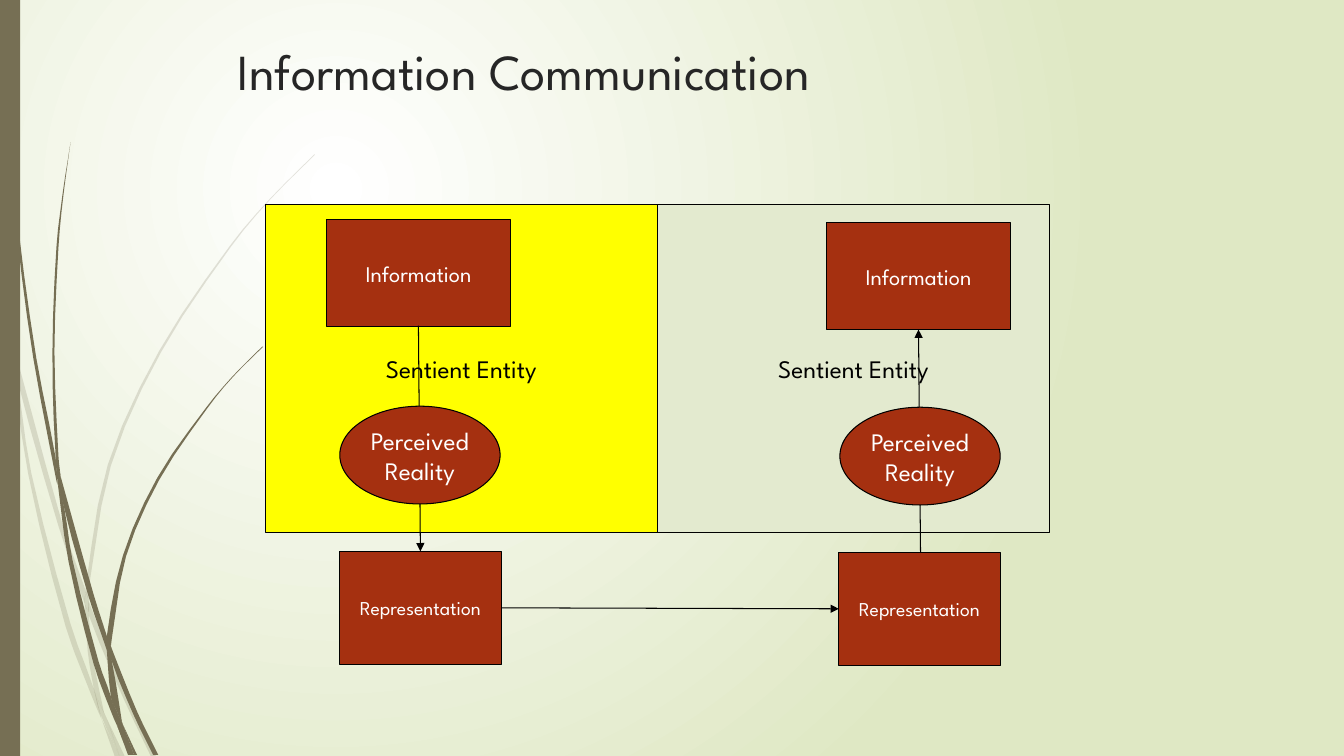
import pptx
import pptx.util
import pptx.dml.color
import pptx.enum.shapes
import pptx.enum.text
import pptx.oxml
import pptx.oxml.ns

Inches, Pt, Color = pptx.util.Inches, pptx.util.Pt, pptx.dml.color.RGBColor
Shape = pptx.enum.shapes.MSO_SHAPE
Anchor = pptx.enum.text.MSO_ANCHOR
Align = pptx.enum.text.PP_ALIGN

# Colours
WHITE, BLACK = Color(0xFF, 0xFF, 0xFF), Color(0, 0, 0)
GREEN, PALE = Color(0xDF, 0xE8, 0xC4), Color(0xE3, 0xEA, 0xCF)
YELLOW, RUST = Color(0xFF, 0xFF, 0), Color(0xA5, 0x30, 0x10)
OLIVE, CHARCOAL = Color(0x76, 0x6F, 0x54), Color(0x26, 0x26, 0x26)

# Content
FONT = "League Spartan"
TITLE = "Information Communication"
ENTITY = "Sentient Entity"
# text, preset, width, height, font size, (left, top) on each side
PARTS = [
    ("Representation", Shape.RECTANGLE, 1.6, 1.12, 14, [(3.37, 5.47), (8.32, 5.48)]),
    ("Information", Shape.RECTANGLE, 1.82, 1.06, 16, [(3.24, 2.18), (8.2, 2.21)]),
]
REALITY = ("Perceived\nReality", Shape.OVAL, 1.59, 0.97, 18, [(3.37, 4.03), (8.33, 4.04)])
ARROWS = [
    ((4.97, 6.03), (8.32, 6.04)),
    ((4.15, 3.23), (4.17, 5.47)),
    ((9.13, 5.48), (9.11, 3.27)),
]

# Slide and entity panels, in inches
WIDTH, HEIGHT = 13.33, 7.5
PANEL_LEFT, PANEL_TOP, PANEL_WIDTH, PANEL_HEIGHT = 2.63, 2.03, 3.89, 3.25
PANELS = [(1, PALE), (0, YELLOW)]  # column, fill; back to front

# Grass blades: the two edges of each piece, from top to bottom
FADED_BLADES = [
    ([(0, 2.82), (0.09, 3.22), (0.11, 3.5)], [(0, 2.99), (0.1, 3.44), (0.11, 3.5)]),
    ([(0.14, 3.45), (0.62, 5.2), (0.85, 5.86)],
     [(0.14, 3.45), (0.17, 3.76), (0.58, 5.22), (0.84, 5.99)]),
    ([(0.88, 5.96), (0.92, 6.07), (1.27, 6.92), (1.55, 7.51)],
     [(0.88, 5.96), (0.88, 6.1), (1.23, 6.94), (1.5, 7.51)]),
    ([(1.05, 7.11), (1.24, 7.51)], [(1.05, 7.11), (1.19, 7.51)]),
    ([(0.11, 3.5), (0.17, 3.76), (0.31, 4.69), (0.7, 6.19), (0.93, 6.83), (1.01, 7.14)],
     [(0.11, 3.5), (0.28, 4.7), (0.65, 6.21), (0.92, 6.93), (1.01, 7.14)]),
    ([(0.84, 5.99), (0.88, 6.1), (0.91, 6.46), (1.03, 7.06), (1.05, 7.11)],
     [(0.84, 5.99), (0.87, 6.46), (0.93, 6.83), (0.96, 6.92), (1.05, 7.11)]),
    ([(3.12, 1.53), (2.68, 1.97), (2.28, 2.44), (1.58, 3.48), (1.07, 4.61), (0.85, 5.84),
      (0.88, 5.96)],
     [(3.12, 1.54), (2.68, 1.98), (2.29, 2.45), (1.6, 3.49), (1.1, 4.62), (0.88, 5.84)]),
    ([(1.01, 7.14), (1.14, 7.51)], [(1.01, 7.14), (1.19, 7.51)]),
    ([(0.85, 5.86), (0.84, 5.99), (0.88, 6.08)], [(0.85, 5.86), (0.88, 5.96), (0.88, 6.1)]),
    ([(0.93, 6.83), (0.99, 7.07), (1.19, 7.51)],
     [(0.93, 6.83), (0.96, 6.92), (1.05, 7.11), (1.19, 7.51)]),
]
DARK_BLADES = [
    ([(0.03, 0), (0.04, 0.48), (0.07, 1.1), (0.17, 2.33), (0.33, 3.55), (0.56, 4.77)],
     [(0.04, 0), (0.05, 0.48), (0.08, 1.09), (0.19, 2.32), (0.36, 3.55), (0.55, 4.53),
      (0.57, 4.81)]),
    ([(0.6, 4.72), (0.93, 5.9), (1.06, 6.31)],
     [(0.6, 4.72), (0.64, 5.05), (0.88, 5.92), (1.06, 6.45)]),
    ([(1.1, 6.41), (1.13, 6.49), (1.36, 7.06), (1.57, 7.49)],
     [(1.1, 6.41), (1.11, 6.56), (1.32, 7.08), (1.52, 7.49)]),
    ([(0.57, 4.77), (0.64, 5.05), (0.72, 5.56), (0.98, 6.57), (1.1, 6.91), (1.17, 7.22)],
     [(0.57, 4.77), (0.68, 5.57), (0.93, 6.59), (1.11, 7.08), (1.17, 7.22)]),
    ([(0.7, 1.41), (0.62, 1.93), (0.56, 2.45), (0.52, 3.49), (0.55, 4.49), (0.6, 4.72)],
     [(0.7, 1.41), (0.63, 1.93), (0.58, 2.45), (0.54, 3.49), (0.58, 4.53), (0.6, 4.72)]),
    ([(1.22, 7.19), (1.36, 7.49)], [(1.22, 7.19), (1.33, 7.49)]),
    ([(0.55, 4.49), (0.57, 4.77), (0.64, 5.05)], [(0.55, 4.49), (0.6, 4.72), (0.64, 5.05)]),
    ([(2.6, 3.44), (2.31, 3.73), (2.04, 4.05), (1.56, 4.74), (1.22, 5.51), (1.06, 6.31),
      (1.1, 6.41)],
     [(2.61, 3.44), (2.31, 3.74), (2.05, 4.06), (1.58, 4.76), (1.25, 5.52), (1.11, 6.33)]),
    ([(1.17, 7.22), (1.27, 7.49)], [(1.17, 7.22), (1.31, 7.49)]),
    ([(1.06, 6.45), (1.1, 6.91), (1.16, 7.06), (1.22, 7.19)],
     [(1.06, 6.45), (1.11, 6.56), (1.21, 7.16)]),
    ([(1.06, 6.31), (1.06, 6.45), (1.11, 6.56)], [(1.06, 6.31), (1.1, 6.41), (1.11, 6.56)]),
    ([(1.1, 6.91), (1.17, 7.22), (1.3, 7.49)],
     [(1.1, 6.91), (1.16, 7.06), (1.22, 7.19), (1.33, 7.49)]),
]


def add_xml(parent, tag, **values):
    element = parent.makeelement(pptx.oxml.ns.qn("a:" + tag), values)
    parent.append(element)
    return element


def paint(box, fill, line=None):
    box.shadow.inherit = False
    box.fill.solid()
    box.fill.fore_color.rgb = fill
    if line is None:
        box.line.fill.background()
    else:
        box.line.color.rgb = line
        box.line.width = Pt(0.75)


def write(box, text, size, color, align, frame_format):
    frame = box.text_frame
    frame.text = text
    for name, value in frame_format.items():
        setattr(frame, name, value)
    for para in frame.paragraphs:
        para.alignment = align
        for span in para.runs:
            for name, value in {"name": FONT, "size": Pt(size), "bold": False}.items():
                setattr(span.font, name, value)
            span.font.color.rgb = color


def add_box(preset, left, top, width, height, fill, text, size, color):
    box = page.shapes.add_shape(preset, *map(Inches, (left, top, width, height)))
    paint(box, fill, BLACK)
    write(box, text, size, color, Align.CENTER,
          {"vertical_anchor": Anchor.MIDDLE, "word_wrap": False})


def add_part(text, preset, width, height, size, corners):
    for left, top in corners:
        add_box(preset, left, top, width, height, RUST, text, size, WHITE)


def smooth(edge, steps=3):
    """Points of a smooth curve through the edge, in thousandths of an inch."""
    knots = [1000 * complex(x, y) for x, y in edge]
    slopes = [(after - before) / (abs(after - here) + abs(here - before))
              for before, here, after in zip(knots[:1] + knots, knots, knots[1:] + knots[-1:])]
    curve = []
    for start, end, leave, arrive in zip(knots, knots[1:], slopes, slopes[1:]):
        reach = abs(end - start) / 3
        for t in (step / steps for step in range(steps)):
            curve.append((1 - t) ** 3 * start + 3 * t * (1 - t) ** 2 * (start + reach * leave)
                         + 3 * t ** 2 * (1 - t) * (end - reach * arrive) + t ** 3 * end)
    return [(point.real, point.imag) for point in curve + knots[-1:]]


def add_blade(first_edge, second_edge, alpha):
    outline = smooth(first_edge) + smooth(second_edge)[::-1]
    builder = page.shapes.build_freeform(*outline[0], scale=Inches(1) / 1000)
    builder.add_line_segments(outline[1:], close=True)
    blade = builder.convert_to_shape()
    paint(blade, OLIVE)
    if alpha < 100:
        tint = blade._element.spPr.find(".//" + pptx.oxml.ns.qn("a:srgbClr"))
        add_xml(tint, "alpha", val=str(alpha * 1000))


deck = pptx.Presentation()
deck.slide_width, deck.slide_height = Inches(WIDTH), Inches(HEIGHT)
page = deck.slides.add_slide(deck.slide_layouts[5])

# Background: radial gradient
backdrop = page.background.fill
backdrop.gradient()
for stop, color, position in zip(backdrop.gradient_stops, (WHITE, GREEN), (0, 1)):
    stop.color.rgb = color
    stop.position = position
gradient = page.background._cSld.find(".//" + pptx.oxml.ns.qn("a:gradFill"))
gradient.remove(gradient.find(pptx.oxml.ns.qn("a:lin")))
circle = add_xml(gradient, "path", path="circle")
add_xml(circle, "fillToRect", l="50000", t="50000", r="100000", b="100000")

# Grass and side bar
for blades, alpha in ((FADED_BLADES, 20), (DARK_BLADES, 100)):
    for edges in blades:
        add_blade(*edges, alpha)
bar = page.shapes.add_shape(Shape.RECTANGLE, 0, 0, Inches(0.2), Inches(HEIGHT))
paint(bar, OLIVE)

# Entity panels
for column, fill in PANELS:
    add_box(Shape.RECTANGLE, PANEL_LEFT + column * PANEL_WIDTH, PANEL_TOP,
            PANEL_WIDTH, PANEL_HEIGHT, fill, ENTITY, 18, BLACK)

# Title
title = page.shapes.title
for name, value in {"left": 2.26, "top": 0.28, "width": 9.75, "height": 0.77}.items():
    setattr(title, name, Inches(value))
write(title, TITLE, 36, CHARCOAL, Align.LEFT,
      {"vertical_anchor": Anchor.BOTTOM, "word_wrap": True})

# Boxes, arrows, then the ovals over the arrows
for part in PARTS:
    add_part(*part)
for start, end in ARROWS:
    arrow = page.shapes.add_connector(pptx.enum.shapes.MSO_CONNECTOR.STRAIGHT,
                                      *map(Inches, start + end))
    arrow.line.color.rgb = BLACK
    arrow.line.width = Pt(0.75)
    add_xml(arrow.line._get_or_add_ln(), "tailEnd", type="triangle")
    add_xml(arrow._element.spPr, "effectLst")
add_part(*REALITY)

deck.save("out.pptx")
